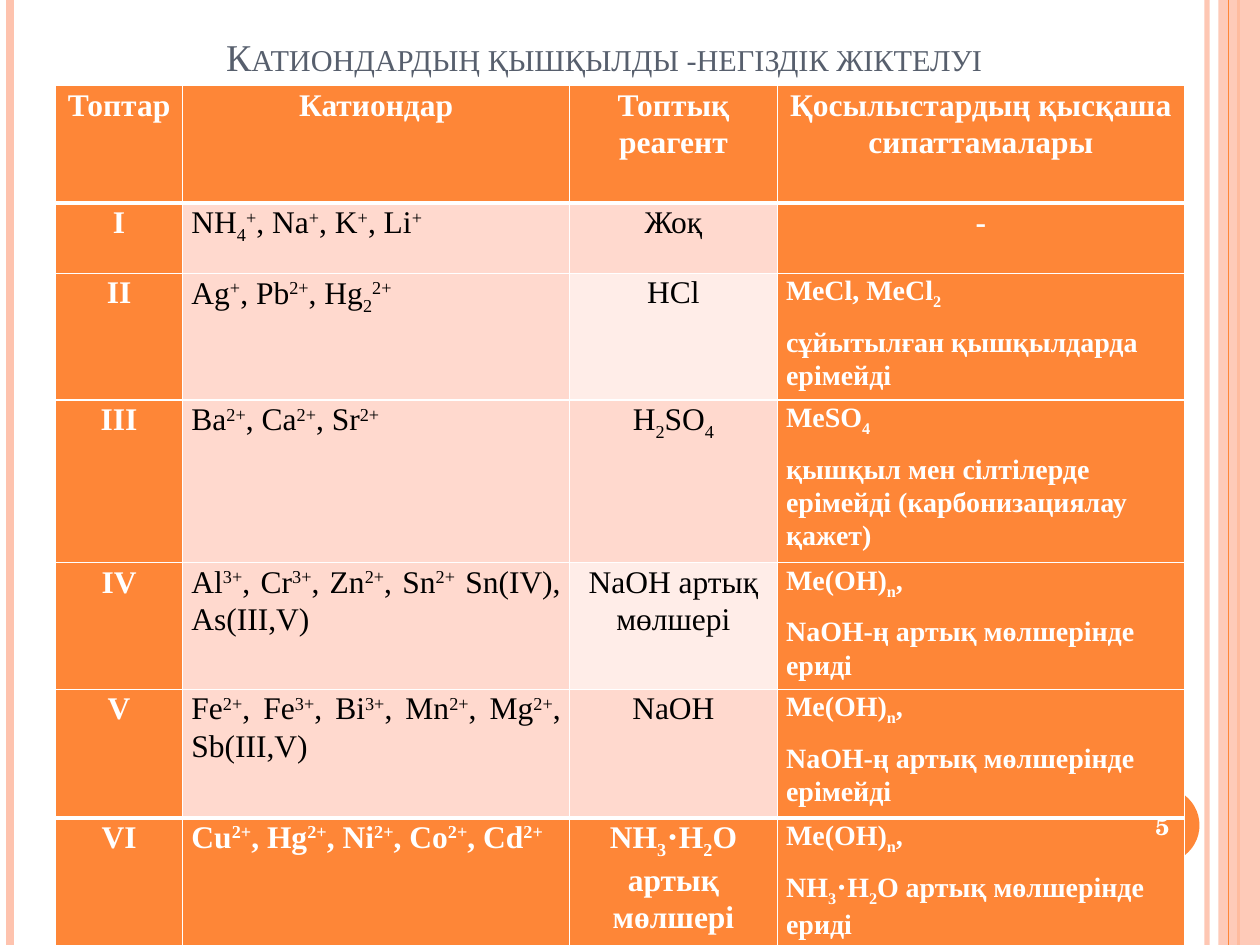
from pptx import Presentation
from pptx.dml.color import RGBColor
from pptx.enum.shapes import MSO_CONNECTOR, MSO_SHAPE
from pptx.enum.text import MSO_ANCHOR, PP_ALIGN
from pptx.oxml.ns import qn
from pptx.util import Inches, Pt
from lxml import etree

CENTER, LEFT, JUSTIFY = PP_ALIGN.CENTER, PP_ALIGN.LEFT, PP_ALIGN.JUSTIFY
MIDDLE, BOTTOM = MSO_ANCHOR.MIDDLE, MSO_ANCHOR.BOTTOM
STRAIGHT, RECT, OVAL = MSO_CONNECTOR.STRAIGHT, MSO_SHAPE.RECTANGLE, MSO_SHAPE.OVAL
ORANGE, PEACH, WHITE = "FE8637", "FEC3AE", "FFFFFF"
LIGHT, LIGHTER = "FFD9CE", "FFEDE8"
SERIF = "Times New Roman"
rgb = RGBColor.from_string


def add_text(p, text, size, color, bold, font=SERIF):
    """Add runs; {_x} is a subscript and {^x} a superscript."""
    for part in text.replace("}", "{").split("{"):
        if not part:
            continue
        baseline = {"_": "-25000", "^": "30000"}.get(part[0])
        r = p.add_run()
        r.text = part[1:] if baseline else part
        r.font.name, r.font.size, r.font.bold = font, Pt(size), bold
        r.font.color.rgb = rgb(color)
        if baseline:
            r.font._element.set("baseline", baseline)


def set_alpha(element, percent):
    color = next(element.iter(qn("a:srgbClr")))
    etree.SubElement(color, qn("a:alpha")).set("val", str(percent * 1000))


prs = Presentation()
prs.slide_width, prs.slide_height = Inches(10), Inches(7.5)
s = prs.slides.add_slide(prs.slide_layouts[6])

# Vertical stripes and the band on the right edge
for x, color, width, alpha in [(9.58, PEACH, 3, 93), (0.08, PEACH, 4.5, 100),
                               (9.83, ORANGE, 1.5, 100), (9.75, ORANGE, 0.75, 100)]:
    if x == 9.75:
        band = s.shapes.add_shape(RECT, Inches(9.67), 0, Inches(0.33), Inches(7.5))
        band.shadow.inherit = False
        band.fill.solid()
        band.fill.fore_color.rgb = rgb(PEACH)
        band.line.fill.background()
        set_alpha(band._element.spPr, 87)
    stripe = s.shapes.add_connector(STRAIGHT, Inches(x), 0, Inches(x), Inches(7.5))
    stripe.line.color.rgb = rgb(color)
    stripe.line.width = Pt(width)
    if alpha < 100:
        set_alpha(stripe._element.spPr, alpha)
    etree.SubElement(stripe._element.spPr, qn("a:effectLst"))

# Page number disc
disc = s.shapes.add_shape(OVAL, Inches(8.92), Inches(6.25), Inches(0.6), Inches(0.6))
disc.shadow.inherit = False
disc.fill.solid()
disc.fill.fore_color.rgb = rgb(ORANGE)
disc.line.fill.background()

# Title
title = s.shapes.add_textbox(Inches(0.5), Inches(0.21), Inches(8.59), Inches(0.47))
tf = title.text_frame
tf.word_wrap = True
tf.vertical_anchor = BOTTOM
p = tf.paragraphs[0]
p.alignment = CENTER
add_text(p, "Катиондардың қышқылды -негіздік жіктелуі", 21.6, "575F6D", False)
p.runs[0].font._element.set("cap", "small")

# Table of cation groups
rows = [
    ["Топтар", "Катиондар", "Топтық реагент", "Қосылыстардың қысқаша сипаттамалары"],
    ["I", "NH{_4}{^+}, Na{^+}, K{^+}, Li{^+}", "Жоқ", "-"],
    ["II", "Ag{^+}, Pb{^2+}, Hg{_2}{^2+}", "HCl",
     "МеСl, MеCl{_2}\nсұйытылған қышқылдарда ерімейді"],
    ["III", "Ba{^2+}, Ca{^2+}, Sr{^2+}", "H{_2}SO{_4}",
     "MеSO{_4}\nқышқыл мен сілтілерде ерімейді (карбонизациялау қажет)"],
    ["IV", "Al{^3+}, Cr{^3+}, Zn{^2+}, Sn{^2+} Sn(IV), As(III,V)", "NaOH артық мөлшері",
     "Mе(OH){_n},\nNaOH-ң артық мөлшерінде ериді"],
    ["V", "Fe{^2+}, Fe{^3+}, Bi{^3+}, Mn{^2+}, Mg{^2+}, Sb(III,V)", "NaOH",
     "Mе(OH){_n},\nNaOH-ң артық мөлшерінде ерімейді"],
    ["VI", "Cu{^2+}, Hg{^2+}, Ni{^2+}, Co{^2+}, Cd{^2+}", "NH{_3}⋅H{_2}O артық мөлшері",
     "Mе(OH){_n},\nNH{_3}⋅H{_2}O артық мөлшерінде ериді"],
]
last = len(rows) - 1
table = s.shapes.add_table(len(rows), 4, Inches(0.44), Inches(0.68),
                           Inches(8.97), Inches(6.69)).table
table.first_row = table.horz_banding = False
for column, width in zip(table.columns, [1.01, 3.07, 1.65, 3.23]):
    column.width = Inches(width)
for row, height in zip(table.rows, [0.93, 0.56, 0.99, 1.26, 0.97, 1.02, 0.97]):
    row.height = Inches(height)

for i, texts in enumerate(rows):
    # Thick rules set off the header row and the last row
    borders = {"L": 1, "R": 1, "T": 3 if i in (1, last) else 1,
               "B": 3 if i in (0, last - 1) else 1}
    for j, text in enumerate(texts):
        cell = table.cell(i, j)
        cell.margin_left = cell.margin_right = Inches(0.07)
        cell.margin_top = cell.margin_bottom = 0
        for side, width in borders.items():
            ln = etree.SubElement(cell._tc.tcPr, qn("a:ln" + side), w=str(Pt(width)))
            fill = etree.SubElement(ln, qn("a:solidFill"))
            etree.SubElement(fill, qn("a:srgbClr"), val=WHITE)

        plain = 0 < i < last and j in (1, 2)
        cell.fill.solid()
        pale = LIGHTER if j == 2 and i % 2 == 0 else LIGHT
        cell.fill.fore_color.rgb = rgb(pale if plain else ORANGE)

        description = j == 3 and i > 1
        for k, line in enumerate(text.split("\n")):
            tf = cell.text_frame
            p = tf.add_paragraph() if k else tf.paragraphs[0]
            p.alignment = LEFT if description else JUSTIFY if j == 1 and i else CENTER
            p.line_spacing = 1.07
            p.space_after = Pt(8)
            add_text(p, line, 16 if description else 18,
                     "000000" if plain else WHITE, not plain)

# Page number
number = s.shapes.add_textbox(Inches(8.89), Inches(6.27), Inches(0.67), Inches(0.57))
tf = number.text_frame
tf.word_wrap = True
tf.vertical_anchor = MIDDLE
p = tf.paragraphs[0]
p.alignment = CENTER
add_text(p, "5", 14, WHITE, True, "TeX Gyre Schola")

prs.save("out.pptx")
